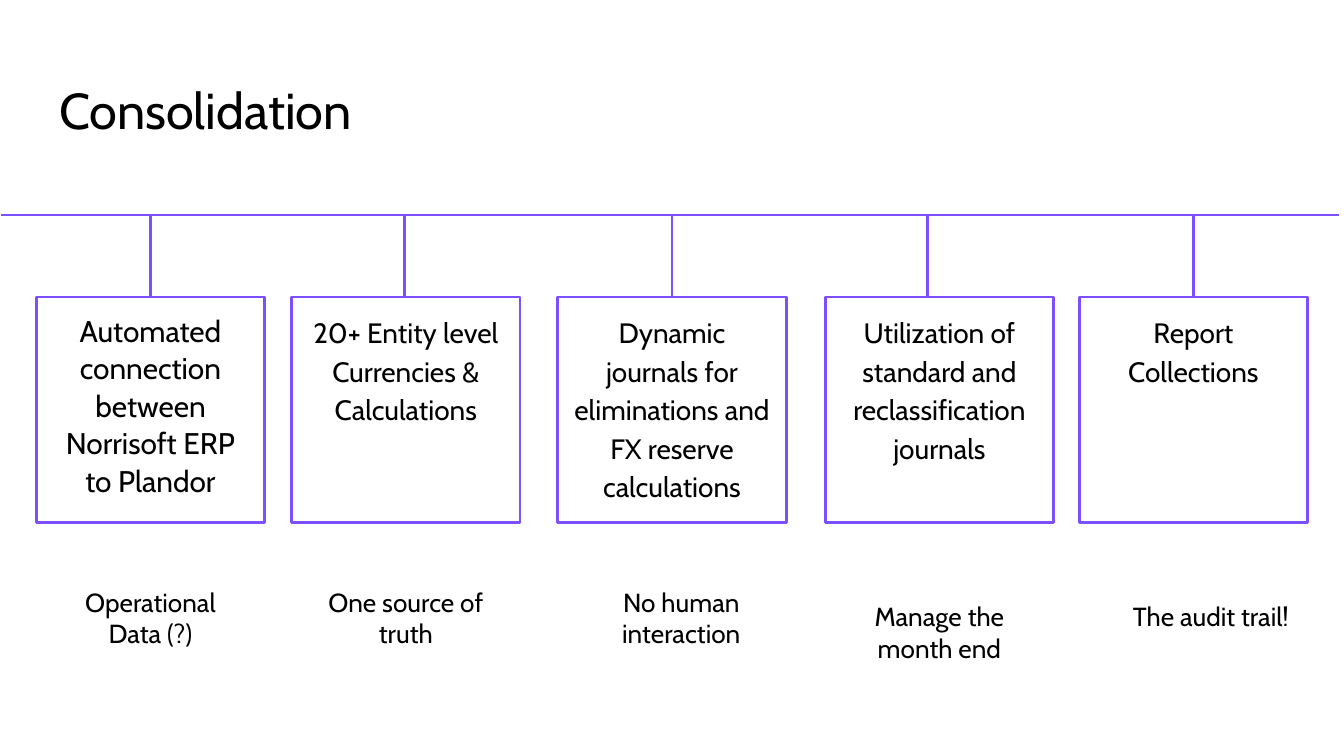
import dataclasses

import pptx
import pptx.dml.color
import pptx.enum.shapes
import pptx.enum.text
import pptx.oxml.ns
import pptx.util
from lxml import etree

Inches = pptx.util.Inches
Align = pptx.enum.text.PP_ALIGN

PURPLE = "7C4FFF"
BLACK = "000000"
WIDTH = 10
HEIGHT = WIDTH * 9 / 16
RAIL_TOP, STEM_TOP = 1.6, 1.61
CARD_TOP, CARD_WIDTH, CARD_HEIGHT = 2.21, 1.7, 1.68
NOTE_WIDTH, NOTE_HEIGHT = 1.44, 0.67


@dataclasses.dataclass
class Step:
    left: float
    stem: float
    text: str
    note: str
    note_left: float
    note_top: float = 4.26
    size: float = 15
    spacing: float = 1.15


STEPS = [
    Step(0.27, 1.12, "Automated connection between Norrisoft ERP to Plandor",
         "Operational Data (?)", 0.4, size=16, spacing=1.05),
    Step(2.17, 3.01, "20+ Entity level Currencies & Calculations",
         "One source of truth", 2.3),
    Step(4.15, 5, "Dynamic journals for eliminations and FX reserve calculations",
         "No human interaction", 4.35),
    Step(6.14, 6.9, "Utilization of standard and reclassification journals",
         "Manage the month end", 6.27, 4.37),
    Step(8.03, 8.88, "Report Collections", "The audit trail!", 8.29, 4.37),
]


def color(code: str):
    return pptx.dml.color.RGBColor.from_string(code)


def write(shape, text: str, size: float, align=Align.CENTER, spacing=1.0) -> None:
    """Fill a shape with one paragraph of top-anchored text."""
    frame = shape.text_frame
    frame.text = text
    format = {
        "word_wrap": True,
        "auto_size": pptx.enum.text.MSO_AUTO_SIZE.NONE,
        "vertical_anchor": pptx.enum.text.MSO_ANCHOR.TOP,
    }
    for side in ("left", "top", "right", "bottom"):
        format[f"margin_{side}"] = Inches(0.1)
    for name, value in format.items():
        setattr(frame, name, value)
    para = frame.paragraphs[0]
    para.alignment = align
    para.line_spacing = spacing
    font = para.runs[0].font
    for name, value in {"name": "Cabin", "size": pptx.util.Pt(size)}.items():
        setattr(font, name, value)
    font.color.rgb = color(BLACK)


def stroke(line) -> None:
    line.color.rgb = color(PURPLE)
    line.width = pptx.util.Pt(1.5)


def draw_line(slide, x1: float, y1: float, x2: float, y2: float) -> None:
    line = slide.shapes.add_connector(
        pptx.enum.shapes.MSO_CONNECTOR.STRAIGHT,
        Inches(x1), Inches(y1), Inches(x2), Inches(y2))
    stroke(line.line)
    etree.SubElement(line._element.spPr, pptx.oxml.ns.qn("a:effectLst"))


def draw_step(slide, step: Step) -> None:
    """Draw a card, its stem up to the rail and the note below it."""
    card = slide.shapes.add_shape(
        pptx.enum.shapes.MSO_SHAPE.RECTANGLE, Inches(step.left), Inches(CARD_TOP),
        Inches(CARD_WIDTH), Inches(CARD_HEIGHT))
    card.shadow.inherit = False
    card.fill.background()
    stroke(card.line)
    write(card, step.text, step.size, spacing=step.spacing)

    draw_line(slide, step.stem, CARD_TOP, step.stem, STEM_TOP)

    note = slide.shapes.add_textbox(
        Inches(step.note_left), Inches(step.note_top),
        Inches(NOTE_WIDTH), Inches(NOTE_HEIGHT))
    write(note, step.note, 14)


def main() -> None:
    deck = pptx.Presentation()
    deck.slide_width, deck.slide_height = Inches(WIDTH), Inches(HEIGHT)
    slide = deck.slides.add_slide(deck.slide_layouts.get_by_name("Title Only"))

    title = slide.shapes.title
    place = {"left": 0.34, "top": 0.49, "width": 9.32, "height": 0.63}
    for name, value in place.items():
        setattr(title, name, Inches(value))
    write(title, "Consolidation", 27, Align.LEFT)

    draw_line(slide, 0.01, RAIL_TOP, 9.96, RAIL_TOP)
    for step in STEPS:
        draw_step(slide, step)
    deck.save("out.pptx")


if __name__ == "__main__":
    main()
